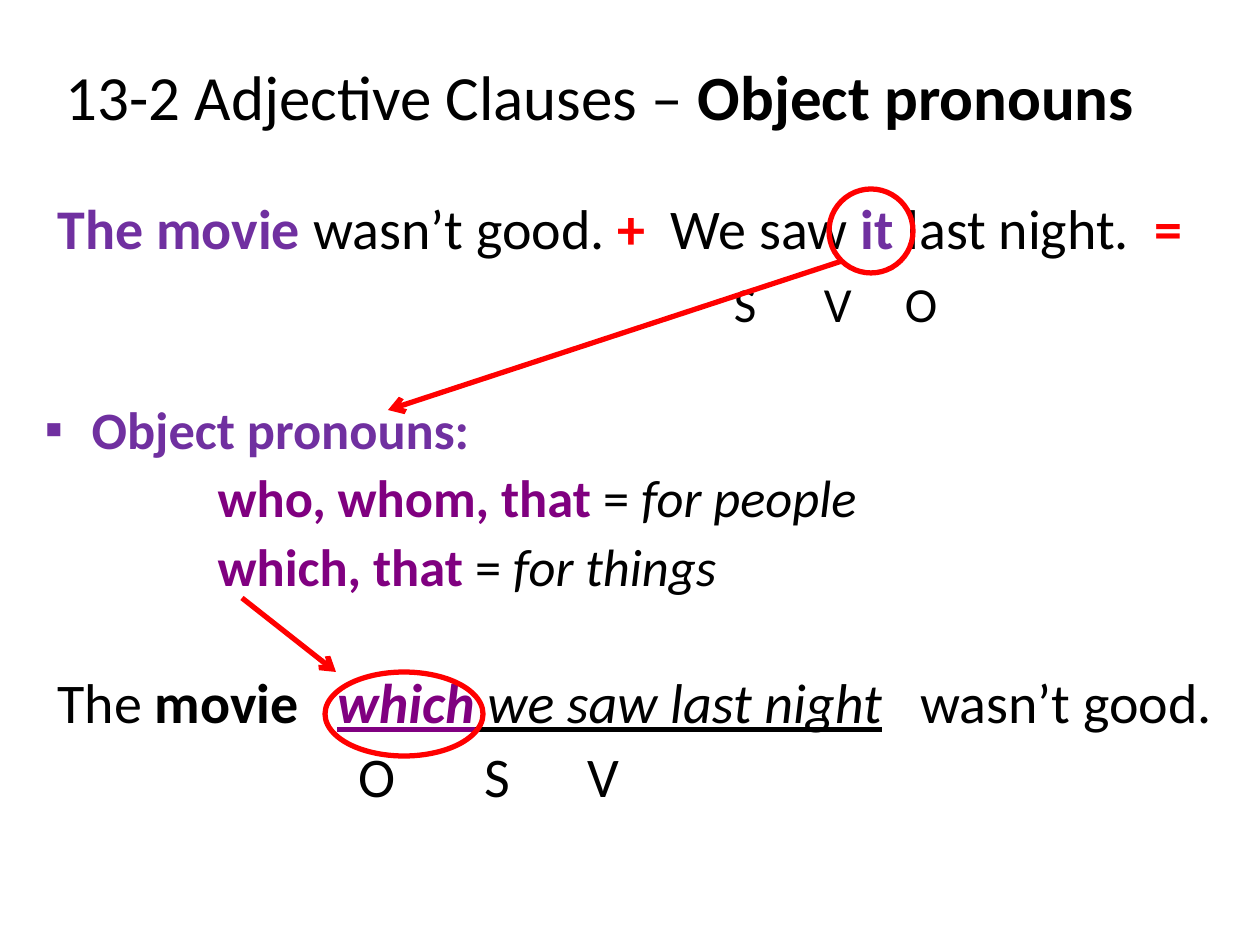
from lxml.etree import SubElement
from pptx import Presentation
from pptx.dml.color import RGBColor
from pptx.enum.shapes import MSO_CONNECTOR, MSO_SHAPE
from pptx.enum.text import MSO_ANCHOR, MSO_AUTO_SIZE, PP_ALIGN
from pptx.oxml.ns import qn
from pptx.util import Pt

EMU_PER_PX = 914400 / 126
BLACK = RGBColor(0x00, 0x00, 0x00)
RED = RGBColor(0xFF, 0x00, 0x00)
VIOLET = RGBColor(0x70, 0x30, 0xA0)
PURPLE = RGBColor(0x80, 0x00, 0x80)


def px(length):
    return round(length * EMU_PER_PX)


def add_text(paragraph, text, size=32, color=BLACK, bold=False, italic=False,
             underline=False, spacing=0):
    """Add a run; spacing is the extra room after each letter, in points."""
    run = paragraph.add_run()
    run.text = text
    font = run.font
    font.name, font.size, font.color.rgb = "Calibri", Pt(size), color
    font.bold, font.italic, font.underline = bold, italic, underline
    if spacing:
        font._element.set("spc", str(round(spacing * 100)))


class SlideBuilder:
    line_width = Pt(3)
    line_height = Pt(39)

    def __init__(self, slide):
        self.slide = slide

    def place(self, shape, left, top, width, height):
        shape.left, shape.top, shape.width, shape.height = map(px, (left, top, width, height))

    def title(self, box, runs):
        shape = self.slide.shapes.title
        self.place(shape, *box)
        shape.text_frame.vertical_anchor = MSO_ANCHOR.MIDDLE
        paragraph = shape.text_frame.paragraphs[0]
        paragraph.alignment = PP_ALIGN.LEFT
        for text, style in runs:
            add_text(paragraph, text, size=36, **style)

    def body(self, box, lines):
        shape = self.slide.placeholders[1]
        self.place(shape, *box)
        frame = shape.text_frame
        frame.auto_size = MSO_AUTO_SIZE.NONE
        for index, line in enumerate(lines):
            paragraph = frame.paragraphs[0] if index == 0 else frame.add_paragraph()
            self.body_line(paragraph, **line)

    def body_line(self, paragraph, runs, size=32, before=0, margin=13, bullet=None):
        paragraph.alignment = PP_ALIGN.LEFT
        paragraph.line_spacing = self.line_height
        paragraph.space_before = Pt(before)
        properties = paragraph._p.get_or_add_pPr()
        properties.set("marL", str(px(margin)))
        properties.set("indent", str(-px(margin) if bullet else 0))
        if bullet:
            SubElement(properties, qn("a:buChar"), char=bullet)
        else:
            SubElement(properties, qn("a:buNone"))
        for text, style in runs:
            add_text(paragraph, text, size=size, **style)

    def labels(self, top, size, lefts):
        """Put one letter under each word, at the given left edges."""
        for letter, left in lefts.items():
            box = self.slide.shapes.add_textbox(*map(px, (left, top, 50, 70)))
            frame = box.text_frame
            frame.word_wrap = True
            frame.margin_left = frame.margin_right = 0
            frame.margin_top = frame.margin_bottom = 0
            add_text(frame.paragraphs[0], letter, size=size)

    def ring(self, left, top, width, height):
        shape = self.slide.shapes.add_shape(MSO_SHAPE.OVAL, *map(px, (left, top, width, height)))
        shape.shadow.inherit = False
        shape.fill.background()
        shape.line.color.rgb = RED
        shape.line.width = self.line_width

    def arrow(self, start, end):
        connector = self.slide.shapes.add_connector(
            MSO_CONNECTOR.STRAIGHT, *map(px, (*start, *end)))
        connector.line.color.rgb = RED
        connector.line.width = self.line_width
        SubElement(connector.line._get_or_add_ln(), qn("a:tailEnd"), type="arrow")
        SubElement(connector._element.spPr, qn("a:effectLst"))


def main():
    presentation = Presentation()
    presentation.slide_width, presentation.slide_height = px(1260), px(945)
    builder = SlideBuilder(presentation.slides.add_slide(presentation.slide_layouts[1]))

    plain, bold, italic = {}, {"bold": True}, {"italic": True}
    sign = {"color": RED, "bold": True}
    noun = {"color": VIOLET, "bold": True}
    pronoun = {"color": PURPLE, "bold": True}
    clause = {"italic": True, "underline": True}
    double_gap, triple_gap = (" ", {"spacing": 7.23}), (" ", {"spacing": 14.46})

    builder.title((53, 32, 1229, 126), [
        ("13-2 Adjective Clauses – ", plain), ("Object pronouns", bold)])
    builder.body((32, 186, 1207, 756), [
        {"runs": [
            ("The movie ", noun), ("wasn’t good. ", plain), ("+", sign), double_gap,
            ("We saw ", plain), ("it", noun), (" last night.", plain), double_gap, ("=", sign)]},
        {"size": 30, "before": 75, "margin": 47, "bullet": "▪",
         "runs": [("Object pronouns:", noun)]},
        {"size": 30, "margin": 173, "runs": [
            ("who, whom, that", pronoun), (" = ", plain), ("for people", italic)]},
        {"size": 30, "margin": 173, "runs": [
            ("which, that", pronoun), (" = ", plain), ("for things", italic)]},
        {"before": 40, "runs": [
            ("The ", plain), ("movie", bold), triple_gap, ("which", {**pronoun, **clause}),
            (" we saw last night", clause), triple_gap, ("wasn’t good.", plain)]},
    ])
    builder.labels(274, 28, {"S": 734, "V": 824, "O": 905})
    builder.labels(741, 32, {"O": 359, "S": 485, "V": 588})

    builder.ring(829, 189, 84, 84)
    builder.arrow((842, 261), (388, 410))
    builder.arrow((242, 598), (336, 672))
    builder.ring(325, 672, 158, 84)
    presentation.save("out.pptx")


if __name__ == "__main__":
    main()
